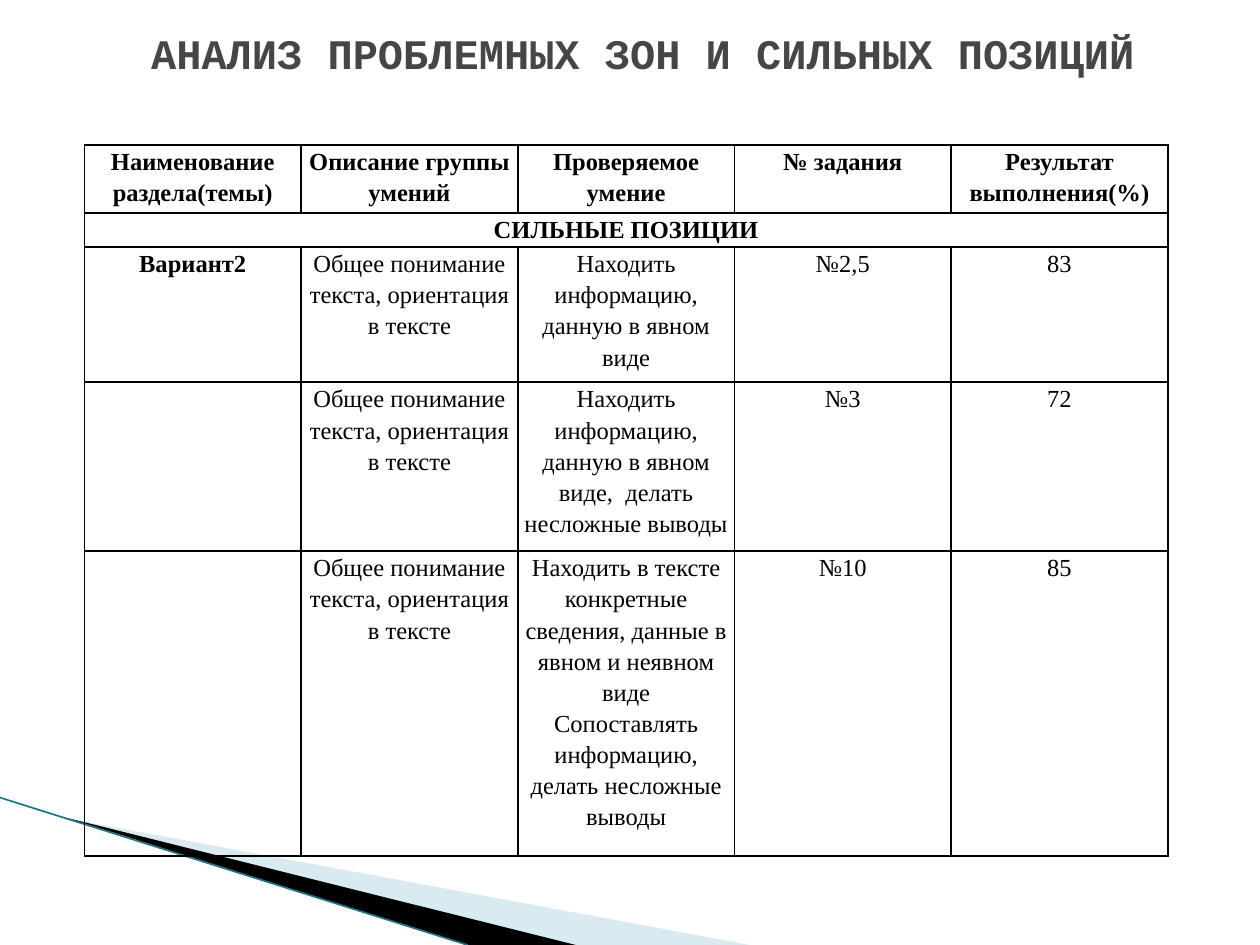
"""Build the slide on problem areas and strong positions."""
from dataclasses import dataclass

import pptx
import pptx.dml.color
import pptx.enum.shapes
import pptx.enum.text
import pptx.oxml
import pptx.oxml.ns
import pptx.util

Inches = pptx.util.Inches
Pt = pptx.util.Pt
COLORS = {"title": "464646", "ink": "000000", "wedge": "A0CBDC", "edge": "1B7489"}
BODY_FONT = "Times New Roman"
GROUP = "Общее понимание текста, ориентация в тексте"
FIND = "Находить информацию, данную в явном виде"
ROWS = [
    ["Наименование раздела(темы)", "Описание группы умений", "Проверяемое умение",
     "№ задания", "Результат выполнения(%)"],
    ["СИЛЬНЫЕ ПОЗИЦИИ"],
    ["Вариант2", GROUP, FIND, "№2,5", "83"],
    ["", GROUP, FIND + ",  делать несложные выводы", "№3", "72"],
    ["", GROUP, "Находить в тексте конкретные сведения, данные в явном и неявном виде\n"
     "Сопоставлять информацию, делать несложные выводы", "№10", "85"],
]
ROW_HEIGHTS = [0.54, 0.27, 1.07, 1.34, 2.42]
COL_WIDTH = 1.72
HEADER_ROWS = 2


@dataclass
class Wedge:
    points: list[tuple[float, float]]
    color: str
    alpha: int = 100


WEDGES = [
    Wedge([(0.55, 6.5), (5.95, 7.5), (4.56, 7.5)], "wedge", 40),
    Wedge([(0.53, 6.49), (4.57, 7.5), (3.72, 7.5)], "ink"),
]


def rgb(name: str) -> pptx.dml.color.RGBColor:
    """Return a named colour."""
    return pptx.dml.color.RGBColor.from_string(COLORS[name])


def sub_element(parent, tag: str, **attrs: str):
    """Append a drawing element with attributes and return it."""
    el = pptx.oxml.parse_xml(f"<{tag} {pptx.oxml.ns.nsdecls('a')}/>")
    for key, value in attrs.items():
        el.set(key, value)
    parent.append(el)
    return el


def write(tf, text: str, *, font: str = BODY_FONT, size: float = 14, color: str = "ink",
          bold: bool = False, spacing: float = 1.0, after: float = 0) -> None:
    """Fill a text frame with centred paragraphs, one per line of text."""
    for i, line in enumerate(text.split("\n")):
        p = tf.paragraphs[0] if i == 0 else tf.add_paragraph()
        p.alignment = pptx.enum.text.PP_ALIGN.CENTER
        p.line_spacing = spacing
        p.space_after = Pt(after)
        r = p.add_run()
        r.text = line
        r.font.name, r.font.size, r.font.bold = font, Pt(size), bold
        r.font.color.rgb = rgb(color)


def add_wedge(s, wedge: Wedge) -> None:
    """Draw a filled wedge without an outline."""
    start, *rest = [(Inches(x), Inches(y)) for x, y in wedge.points]
    builder = s.shapes.build_freeform(*start)
    builder.add_line_segments(rest, close=True)
    sp = builder.convert_to_shape()
    sp.shadow.inherit = False
    sp.line.fill.background()
    sp.fill.solid()
    sp.fill.fore_color.rgb = rgb(wedge.color)
    if wedge.alpha < 100:
        clr = sp.fill._xPr.find(".//" + pptx.oxml.ns.qn("a:srgbClr"))
        sub_element(clr, "a:alpha", val=str(wedge.alpha * 1000))


def add_edge(s) -> None:
    """Draw the thin line along the wedges."""
    line = s.shapes.add_connector(pptx.enum.shapes.MSO_CONNECTOR.STRAIGHT,
                                  Inches(0), Inches(6.33), Inches(3.71), Inches(7.5))
    line.line.color.rgb = rgb("edge")
    line.line.width = Pt(0.95)
    sub_element(line._element.spPr, "a:effectLst")


def add_title(s) -> None:
    """Write the slide title."""
    box = s.shapes.add_textbox(Inches(0.35), Inches(0.13), Inches(9.5), Inches(0.92))
    tf = box.text_frame
    tf.word_wrap = True
    tf.margin_top = Inches(0.09)
    write(tf, "АНАЛИЗ ПРОБЛЕМНЫХ ЗОН И СИЛЬНЫХ ПОЗИЦИЙ", font="Courier New",
          size=24, color="title", bold=True)


def format_cell(cell) -> None:
    """Give a cell its margins, borders and empty fill."""
    cell.margin_left = cell.margin_right = Inches(0.05)
    cell.margin_top = cell.margin_bottom = 0
    tcPr = cell._tc.get_or_add_tcPr()
    for side in "LRTB":
        ln = sub_element(tcPr, f"a:ln{side}", w=str(Pt(1)))
        fill = sub_element(ln, "a:solidFill")
        sub_element(fill, "a:srgbClr", val=COLORS["ink"])
    cell.fill.background()


def add_results(s) -> None:
    """Draw the table of results."""
    n_cols = len(ROWS[0])
    frame = s.shapes.add_table(len(ROWS), n_cols, Inches(0.67), Inches(1.15),
                               Inches(COL_WIDTH * n_cols), Inches(sum(ROW_HEIGHTS)))
    table = frame.table
    table.first_row = table.horz_banding = False
    for col in table.columns:
        col.width = Inches(COL_WIDTH)
    for row, height in zip(table.rows, ROW_HEIGHTS):
        row.height = Inches(height)
        for cell in row.cells:
            format_cell(cell)
    table.cell(1, 0).merge(table.cell(1, n_cols - 1))
    for i, texts in enumerate(ROWS):
        header = i < HEADER_ROWS
        for j, text in enumerate(texts):
            if text:
                write(table.cell(i, j).text_frame, text, bold=header or j == 0,
                      spacing=1.15, after=10 if header else 0)


def main() -> None:
    """Build and save the presentation."""
    prs = pptx.Presentation()
    prs.slide_width, prs.slide_height = Inches(10), Inches(7.5)
    s = prs.slides.add_slide(prs.slide_layouts[6])
    for wedge in WEDGES:
        add_wedge(s, wedge)
    add_edge(s)
    add_title(s)
    add_results(s)
    prs.save("out.pptx")


if __name__ == "__main__":
    main()
